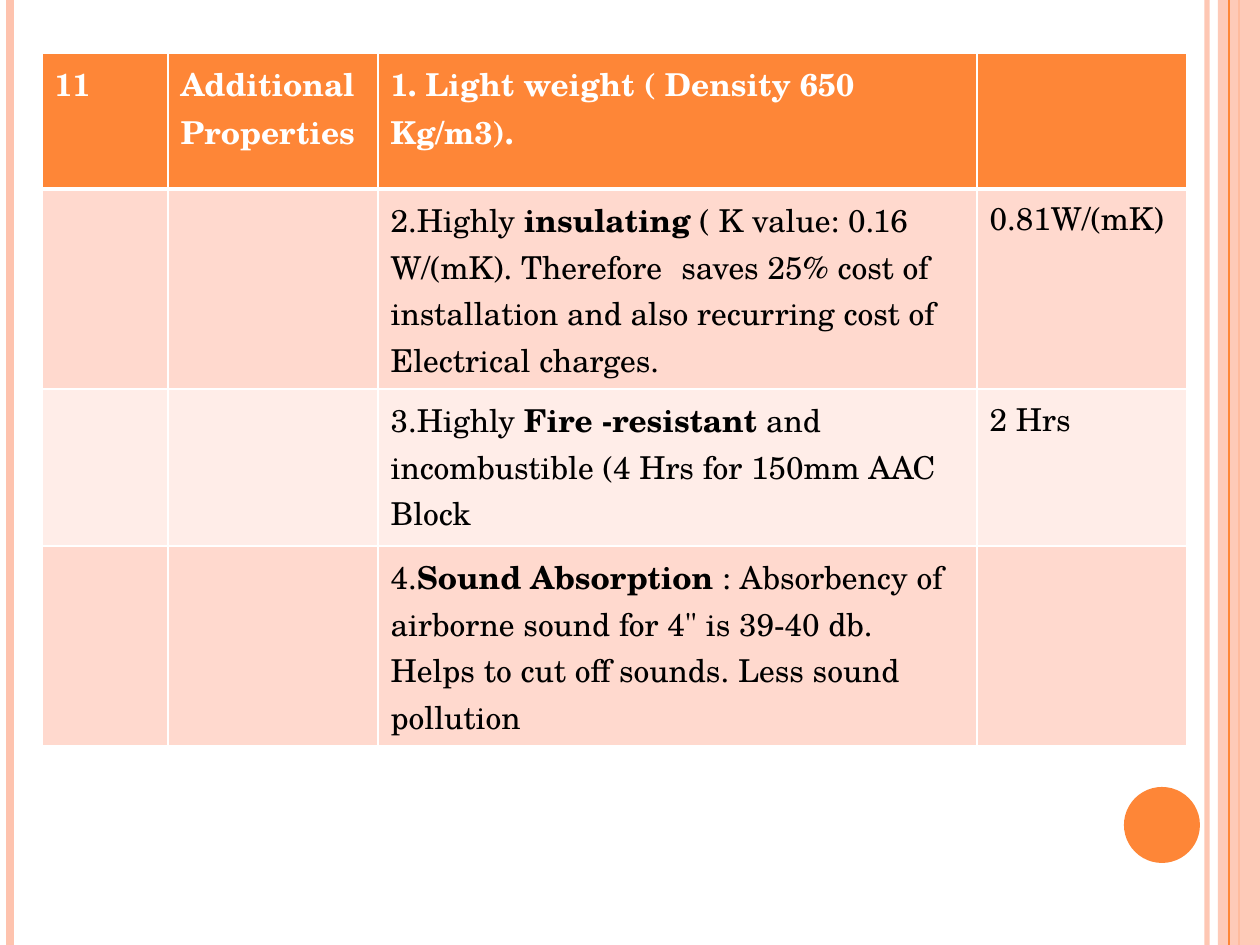
from dataclasses import dataclass

from lxml.etree import SubElement
from pptx import Presentation
from pptx.dml.color import RGBColor
from pptx.enum.shapes import MSO_CONNECTOR as CONN, MSO_SHAPE as SHAPE
from pptx.oxml import parse_xml
from pptx.oxml.ns import nsdecls, qn
from pptx.util import Emu, Pt

EMU_PER_PX = 914400 / 126
W, H = 1260, 945
FONT = "TeX Gyre Schola"
ORANGE, PEACH, WHITE, BLACK = "FE8637", "FEC3AE", "FFFFFF", "000000"
BAND_DARK, BAND_LIGHT = "FFD9CE", "FFEDE8"


@dataclass
class Rule:
    x: int
    color: str
    width: float
    opacity: int = 100


@dataclass
class Run:
    text: str
    bold: bool = False


@dataclass
class Row:
    height: int
    fill: str
    cells: list[list[Run]]


LEFT_RULES = [Rule(1207, PEACH, 3, 93), Rule(10, PEACH, 4.5), Rule(1239, ORANGE, 1.5)]
TOP_RULE = Rule(1229, ORANGE, 0.75)
COLUMNS = [126, 210, 599, 210]
ROWS = [
    Row(136, ORANGE, [
        [Run("11", True)],
        [Run("Additional Properties", True)],
        [Run("1. Light weight ( Density 650 Kg/m3).", True)],
        [],
    ]),
    Row(168, BAND_DARK, [
        [], [],
        [Run("2.Highly "), Run("insulating", True),
         Run(" ( K value: 0.16 W/(mK). Therefore\u00a0 saves 25% cost of installation "
             "and also recurring cost of Electrical charges.")],
        [Run("0.81W/(mK)")],
    ]),
    Row(157, BAND_LIGHT, [
        [], [],
        [Run("3.Highly "), Run("Fire -resistant", True),
         Run(" and incombustible (4 Hrs for 150mm AAC Block")],
        [Run("2 Hrs")],
    ]),
    Row(194, BAND_DARK, [
        [], [],
        [Run("4."), Run("Sound Absorption", True),
         Run(" : Absorbency of airborne sound for 4\" is 39-40 db. "
             "Helps to cut off sounds. Less sound pollution")],
        [],
    ]),
]


def px(n: int) -> Emu:
    return Emu(round(n * EMU_PER_PX))


def rgb(color: str) -> RGBColor:
    return RGBColor.from_string(color)


def set_opacity(element, percent: int) -> None:
    if percent < 100:
        clr = next(element.iter(qn("a:srgbClr")))
        SubElement(clr, qn("a:alpha")).set("val", str(percent * 1000))


def add_rule(s, rule: Rule) -> None:
    """Draw a vertical line over the full slide height."""
    c = s.shapes.add_connector(CONN.STRAIGHT, px(rule.x), 0, px(rule.x), px(H))
    c.line.color.rgb = rgb(rule.color)
    c.line.width = Pt(rule.width)
    set_opacity(c.line._ln, rule.opacity)
    SubElement(c._element.spPr, qn("a:effectLst"))


def add_plain_shape(s, kind: SHAPE, x: int, y: int, w: int, h: int,
                    fill: str, opacity: int = 100) -> None:
    sp = s.shapes.add_shape(kind, px(x), px(y), px(w), px(h))
    sp.shadow.inherit = False
    sp.fill.solid()
    sp.fill.fore_color.rgb = rgb(fill)
    set_opacity(sp._element.spPr, opacity)
    sp.line.fill.background()


def add_run(p, text: str, *, bold: bool = False, color: str = BLACK, size: int = 18) -> None:
    r = p.add_run()
    r.text = text
    r.font.name = FONT
    r.font.size = Pt(size)
    r.font.bold = bold
    r.font.color.rgb = rgb(color)


def set_borders(cell, top: float, bottom: float) -> None:
    tc_pr = cell._tc.get_or_add_tcPr()
    sides = [("L", 1), ("R", 1), ("T", top), ("B", bottom)]
    for i, (side, width) in enumerate(sides):
        tc_pr.insert(i, parse_xml(
            f'<a:ln{side} {nsdecls("a")} w="{Pt(width)}"><a:solidFill>'
            f'<a:srgbClr val="{WHITE}"/></a:solidFill></a:ln{side}>'))


def add_properties_table(s, x: int, y: int) -> None:
    height = sum(row.height for row in ROWS)
    table = s.shapes.add_table(len(ROWS), len(COLUMNS), px(x), px(y),
                               px(sum(COLUMNS)), px(height)).table
    for column, width in zip(table.columns, COLUMNS):
        column.width = px(width)
    for i, row in enumerate(ROWS):
        table.rows[i].height = px(row.height)
        for j, runs in enumerate(row.cells):
            cell = table.cell(i, j)
            cell.fill.solid()
            cell.fill.fore_color.rgb = rgb(row.fill)
            set_borders(cell, top=3 if i == 1 else 1, bottom=3 if i == 0 else 1)
            for run in runs:
                add_run(cell.text_frame.paragraphs[0], run.text, bold=run.bold,
                        color=WHITE if i == 0 else BLACK)


def main() -> None:
    prs = Presentation()
    prs.slide_width, prs.slide_height = px(W), px(H)
    s = prs.slides.add_slide(prs.slide_layouts[6])
    s.background.fill.solid()
    s.background.fill.fore_color.rgb = rgb(WHITE)
    for rule in LEFT_RULES:
        add_rule(s, rule)
    add_plain_shape(s, SHAPE.RECTANGLE, 1218, 0, 42, H, PEACH, opacity=87)
    add_rule(s, TOP_RULE)
    add_plain_shape(s, SHAPE.OVAL, 1124, 787, 76, 76, ORANGE)
    add_properties_table(s, 42, 53)
    prs.save("out.pptx")


if __name__ == "__main__":
    main()
